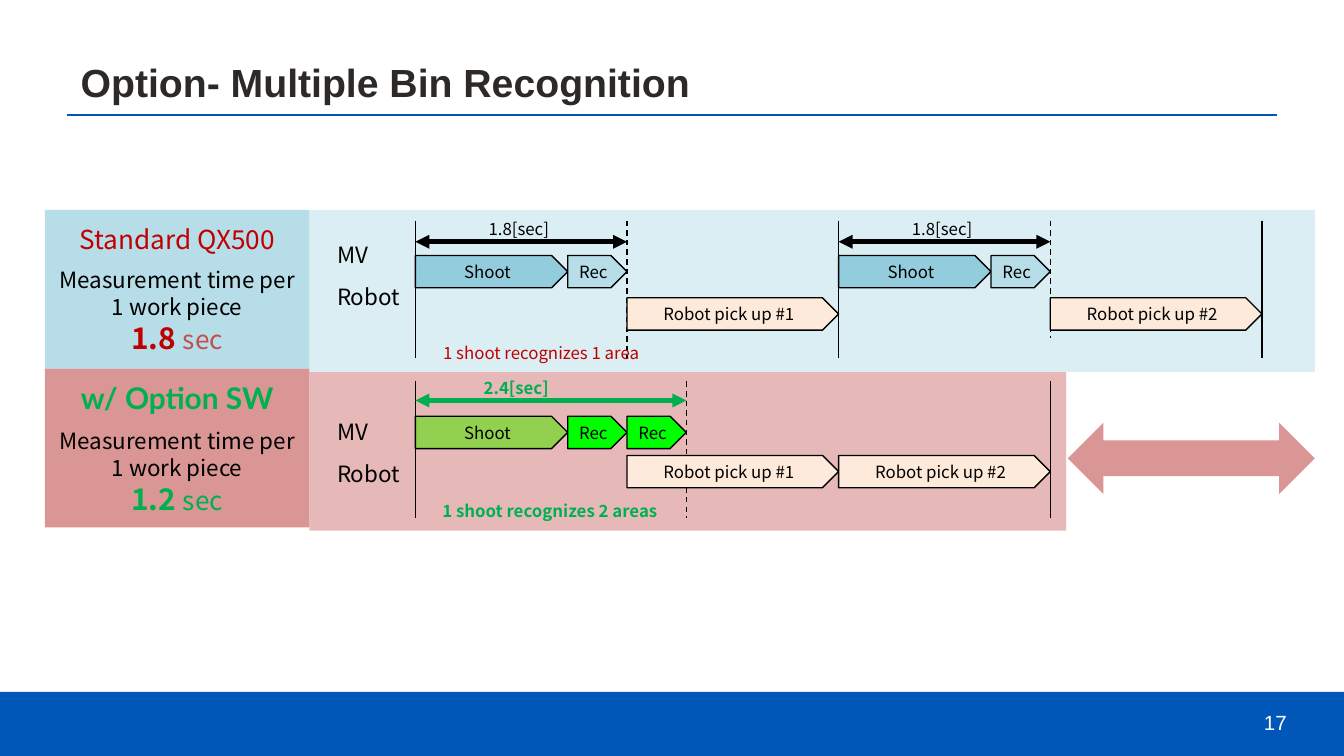
from dataclasses import dataclass

from lxml.etree import SubElement
from pptx import Presentation
from pptx.dml.color import RGBColor
from pptx.enum.dml import MSO_LINE
from pptx.enum.shapes import MSO_CONNECTOR, MSO_SHAPE
from pptx.enum.text import MSO_ANCHOR, MSO_AUTO_SIZE, PP_ALIGN
from pptx.oxml.ns import qn
from pptx.util import Cm, Pt

SANS, TITLE_FONT = "Noto Sans CJK JP", "Arial"
BLACK, BLUE, GREEN, RED = "000000", "0057B8", "00B050", "C00000"
SKY, PINK, ROSE, CREAM = "B7DEE8", "E6B9B8", "D99694", "FDEADA"

# Time axis: one cycle is a shot plus a recognition, as long as one pick-up
START, SHOOT, REC = 7.85, 2.88, 1.12
CYCLE = SHOOT + REC
STEP_H = 0.61


@dataclass
class Step:
    text: str
    x: float
    y: float
    w: float
    fill: str


@dataclass
class Marker:
    x: float
    top: float
    bottom: float
    dashed: bool = False


@dataclass
class Span:
    text: str
    x: float
    y: float
    w: float
    text_x: float
    color: str = BLACK
    bold: bool = False


@dataclass
class Label:
    text: str
    x: float
    y: float
    w: float


@dataclass
class Panel:
    y: float
    fill: str
    heading: str
    heading_font: str
    heading_size: int
    color: str
    seconds: str
    unit_color: str


def rgb(value: str) -> RGBColor:
    return RGBColor.from_string(value)


def style(r, size: float, color: str, bold: bool = False, font: str = SANS) -> None:
    r.font.size, r.font.bold, r.font.name = Pt(size), bold, font
    r.font.color.rgb = rgb(color)


def add_block(s, kind, x: float, y: float, w: float, h: float, fill: str):
    sp = s.shapes.add_shape(kind, Cm(x), Cm(y), Cm(w), Cm(h))
    sp.shadow.inherit = False
    sp.fill.solid()
    sp.fill.fore_color.rgb = rgb(fill)
    sp.line.fill.background()
    return sp


def add_line(s, x1: float, y1: float, x2: float, y2: float, color: str, width: float):
    line = s.shapes.add_connector(MSO_CONNECTOR.STRAIGHT, Cm(x1), Cm(y1), Cm(x2), Cm(y2))
    line.line.color.rgb = rgb(color)
    line.line.width = Pt(width)
    SubElement(line._element.spPr, qn("a:effectLst"))
    return line


def add_text(s, text: str, x: float, y: float, w: float, h: float, size: float,
             color: str, bold: bool = False, align=PP_ALIGN.CENTER, font: str = SANS):
    tf = s.shapes.add_textbox(Cm(x), Cm(y), Cm(w), Cm(h)).text_frame
    tf.text = text
    tf.word_wrap = False
    tf.auto_size = MSO_AUTO_SIZE.SHAPE_TO_FIT_TEXT
    tf.margin_top = tf.margin_bottom = Cm(0.1 if size < 10 else 0.13)
    p = tf.paragraphs[0]
    p.alignment = align
    style(p.runs[0], size, color, bold, font)
    return tf


def add_step(s, step: Step) -> None:
    sp = add_block(s, MSO_SHAPE.PENTAGON, step.x, step.y, step.w, STEP_H, step.fill)
    sp.line.color.rgb = rgb(BLACK)
    sp.line.width = Pt(0.75)
    tf = sp.text_frame
    tf.text = step.text
    tf.word_wrap = step.w > REC
    tf.vertical_anchor = MSO_ANCHOR.MIDDLE
    tf.margin_left = tf.margin_right = Cm(0.2)
    tf.margin_top = tf.margin_bottom = Cm(0.1)
    tf.paragraphs[0].alignment = PP_ALIGN.CENTER
    style(tf.paragraphs[0].runs[0], 9, BLACK)


def add_marker(s, m: Marker) -> None:
    line = add_line(s, m.x, m.top, m.x, m.bottom, BLACK, 0.75)
    if m.dashed:
        line.line.dash_style = MSO_LINE.DASH


def add_span(s, span: Span) -> None:
    """Draw a double-headed duration arrow with its time above."""
    line = add_line(s, span.x, span.y, span.x + span.w, span.y, span.color, 2.5)
    ln = line.line._get_or_add_ln()
    for end in ("a:headEnd", "a:tailEnd"):
        SubElement(ln, qn(end), type="triangle")
    add_text(s, span.text, span.text_x, span.y - 0.53, 1.83, 0.58, 9, span.color, span.bold)


def add_panel(s, panel: Panel) -> None:
    sp = add_block(s, MSO_SHAPE.RECTANGLE, 0.85, panel.y, 5, 3, panel.fill)
    tf = sp.text_frame
    tf.word_wrap = True
    tf.vertical_anchor = MSO_ANCHOR.MIDDLE
    tf.text = f"{panel.heading}\nMeasurement time per 1 work piece\n{panel.seconds} "
    heading, measure, time = tf.paragraphs
    for p in tf.paragraphs:
        p.alignment = PP_ALIGN.CENTER
    measure.space_before = Pt(6)
    style(heading.runs[0], panel.heading_size, panel.color,
          panel.heading_font != SANS, panel.heading_font)
    style(measure.runs[0], 12, BLACK)
    style(time.runs[0], 16, panel.color, True)
    r = time.add_run()
    r.text = "sec"
    style(r, 14, panel.unit_color)


def add_frame(s) -> None:
    """Draw the footer bar, title, rule and page number."""
    add_block(s, MSO_SHAPE.RECTANGLE, 0, 13.08, 25.4, 1.21, BLUE)
    add_line(s, 1.27, 2.18, 24.13, 2.18, BLUE, 1.25)
    title = s.shapes.title
    title.left, title.top, title.width, title.height = Cm(1.27), Cm(0.53), Cm(22.86), Cm(1.6)
    tf = title.text_frame
    tf.text = "Option- Multiple Bin Recognition"
    tf.vertical_anchor = MSO_ANCHOR.BOTTOM
    p = tf.paragraphs[0]
    p.alignment, p.line_spacing = PP_ALIGN.LEFT, 0.9
    style(p.runs[0], 21, "2D2926", True, TITLE_FONT)
    number = add_text(s, "17", 23.5, 13.28, 1.07, 0.76, 11, "FFFFFF",
                      align=PP_ALIGN.RIGHT, font=TITLE_FONT)
    number.vertical_anchor = MSO_ANCHOR.MIDDLE


def main() -> None:
    prs = Presentation()
    prs.slide_width, prs.slide_height = Cm(25.4), Cm(14.29)
    s = prs.slides.add_slide(prs.slide_layouts[5])
    add_frame(s)

    add_block(s, MSO_SHAPE.RECTANGLE, 5.85, 7.03, 14.3, 3, PINK)
    add_block(s, MSO_SHAPE.RECTANGLE, 5.85, 3.97, 19, 3.06, "DBEEF4")
    add_block(s, MSO_SHAPE.LEFT_RIGHT_ARROW, 20.18, 7.99, 4.67, 1.35, ROSE)

    for panel in (
        Panel(3.97, SKY, "Standard QX500", SANS, 14, RED, "1.8", "C0504D"),
        Panel(6.97, ROSE, "w/ Option SW", "Lato", 16, GREEN, "1.2", GREEN),
    ):
        add_panel(s, panel)

    option_end = START + CYCLE + REC
    markers = [Marker(START + i * CYCLE, 4.17, 6.38 if i == 3 else 6.76, i % 2 == 1)
               for i in range(5)]
    markers += [Marker(START, 7.21, 9.8), Marker(START + 3 * CYCLE, 7.21, 9.8),
                Marker(option_end, 7.21, 9.8, True)]
    for marker in markers:
        add_marker(s, marker)

    spans = [Span("1.8[sec]", x, 4.57, CYCLE, x + 1.04) for x in (START, START + 2 * CYCLE)]
    spans.append(Span("2.4[sec]", START, 7.57, CYCLE + REC, START + 0.99, GREEN, True))
    for span in spans:
        add_span(s, span)

    steps = []
    for i in range(2):
        x = START + 2 * i * CYCLE
        pick = f"Robot pick up #{i + 1}"
        steps += [
            Step("Shoot", x, 4.83, SHOOT, "93CDDD"),
            Step("Rec", x + SHOOT, 4.83, REC, SKY),
            Step(pick, x + CYCLE, 5.63, CYCLE, CREAM),
            Step("Rec", START + SHOOT + i * REC, 7.87, REC, "00FF00"),
            Step(pick, START + (i + 1) * CYCLE, 8.61, CYCLE, CREAM),
        ]
    steps.append(Step("Shoot", START, 7.87, SHOOT, "92D050"))
    for step in steps:
        add_step(s, step)

    for y in (4.42, 7.77):
        for label in (Label("MV", 6.12, y, 1.17), Label("Robot", 6.12, y + 0.8, 1.73)):
            add_text(s, label.text, label.x, label.y, label.w, 0.76, 12, BLACK,
                     align=PP_ALIGN.LEFT)
    add_text(s, "1 shoot recognizes 1 area", 7.95, 6.38, 4.55, 0.58, 9, RED)
    add_text(s, "1 shoot recognizes 2 areas", START, 9.37, 5.08, 0.58, 9, GREEN, True)

    prs.save("out.pptx")


if __name__ == "__main__":
    main()
